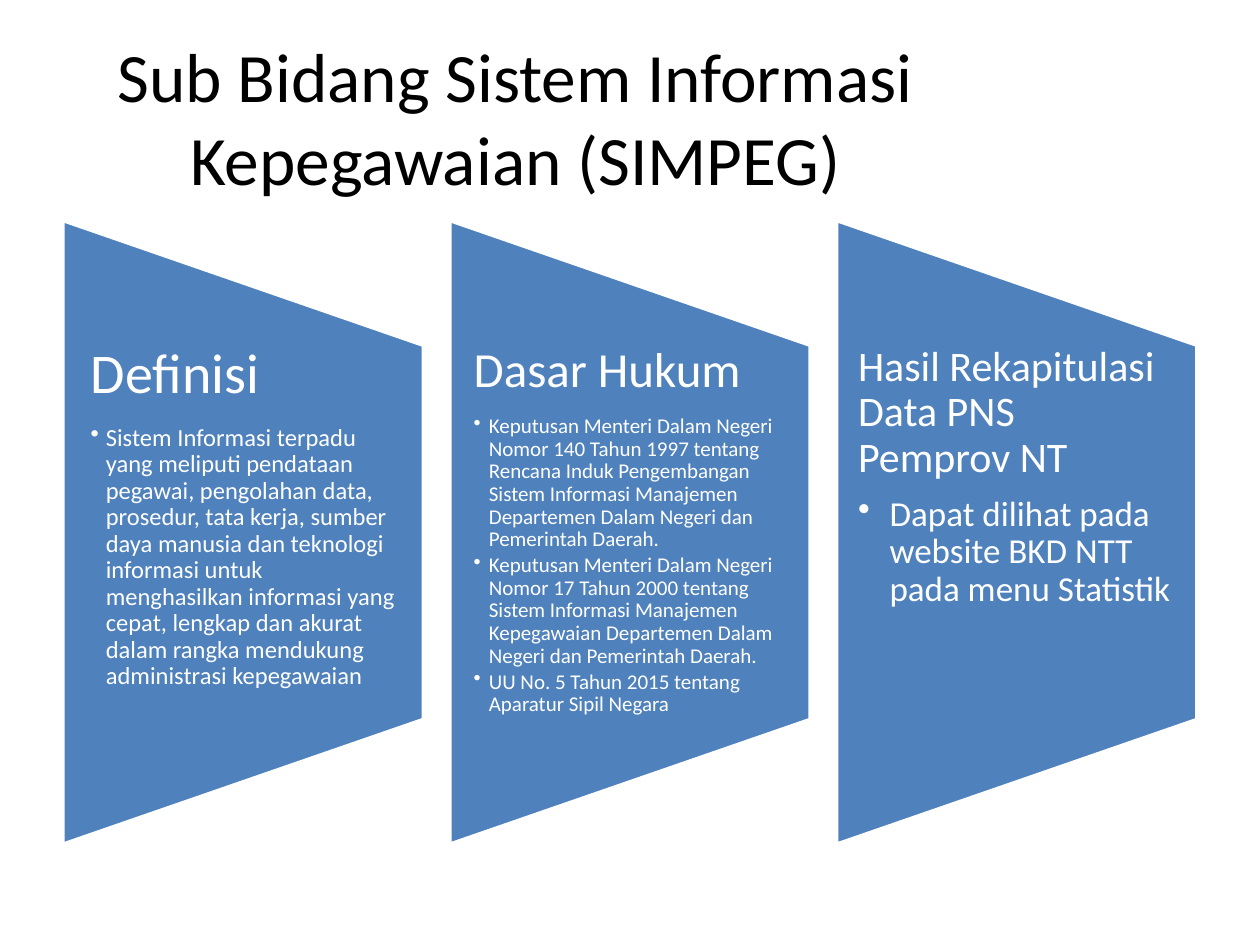
import pptx
import pptx.util
import pptx.dml.color
import pptx.enum.shapes
import pptx.enum.text
import lxml.etree
from pptx.oxml.ns import qn

COLORS = {"panel": "4F81BD", "light": "FFFFFF", "title": "000000"}
FONT = "Calibri"
SLIDE_WIDTH, SLIDE_HEIGHT = 10, 7.5
PANEL_LEFT, PANEL_PITCH, PANEL_WIDTH = 0.5, 3.07, 2.86
PANEL_TOP, PANEL_HEIGHT = 1.75, 4.95
TEXT_HEIGHT = PANEL_HEIGHT * 0.6

# heading, heading size, body size, side inset, bullet indent, bullets
PANELS = [
    ("Definisi", 32, 14, 0.22, 0.12, [
        "Sistem Informasi terpadu yang meliputi pendataan pegawai, pengolahan data, "
        "prosedur, tata kerja, sumber daya manusia dan teknologi informasi untuk "
        "menghasilkan informasi yang cepat, lengkap dan akurat dalam rangka "
        "mendukung administrasi kepegawaian",
    ]),
    ("Dasar Hukum", 28, 12, 0.19, 0.12, [
        "Keputusan Menteri Dalam Negeri Nomor 140 Tahun 1997 tentang Rencana Induk "
        "Pengembangan Sistem Informasi Manajemen Departemen Dalam Negeri dan "
        "Pemerintah Daerah.",
        "Keputusan Menteri Dalam Negeri Nomor 17 Tahun 2000 tentang Sistem Informasi "
        "Manajemen Kepegawaian Departemen Dalam Negeri dan Pemerintah Daerah.",
        "UU No. 5 Tahun 2015 tentang Aparatur Sipil Negara",
    ]),
    ("Hasil Rekapitulasi Data PNS Pemprov NT", 24, 20, 0.17, 0.25, [
        "Dapat dilihat pada website BKD NTT pada menu Statistik",
    ]),
]


def rgb(name):
    return pptx.dml.color.RGBColor.from_string(COLORS[name])


def inches(*lengths):
    return [pptx.util.Inches(length) for length in lengths]


def write_paragraph(paragraph, text, size, color):
    paragraph.text = text
    for run in paragraph.runs:
        run.font.name = FONT
        run.font.size = pptx.util.Pt(size)
        run.font.color.rgb = rgb(color)


def add_bullet(paragraph, indent):
    properties = paragraph._p.get_or_add_pPr()
    properties.set("marL", str(pptx.util.Inches(indent)))
    properties.set("indent", str(-pptx.util.Inches(indent)))
    lxml.etree.SubElement(properties, qn("a:buChar")).set("char", "•")


def space_paragraph(paragraph, after):
    paragraph.line_spacing = 0.9
    paragraph.space_after = pptx.util.Pt(after)


def add_title(slide, text):
    box = slide.shapes.add_textbox(*inches(0.5, 0.3, 7.18, 1.25))
    frame = box.text_frame
    frame.word_wrap = True
    frame.vertical_anchor = pptx.enum.text.MSO_ANCHOR.MIDDLE
    write_paragraph(frame.paragraphs[0], text, 39.6, "title")
    frame.paragraphs[0].alignment = pptx.enum.text.PP_ALIGN.CENTER


def add_panel_shape(slide, left):
    """Turn the shape a quarter about its centre, so its width runs downwards."""
    shape = slide.shapes.add_shape(
        pptx.enum.shapes.MSO_SHAPE.FLOWCHART_MANUAL_OPERATION,
        *inches(left + (PANEL_WIDTH - PANEL_HEIGHT) / 2,
                PANEL_TOP + (PANEL_HEIGHT - PANEL_WIDTH) / 2,
                PANEL_HEIGHT, PANEL_WIDTH))
    shape.rotation = 270
    shape.shadow.inherit = False
    shape.fill.solid()
    shape.fill.fore_color.rgb = rgb("panel")
    shape.line.color.rgb = rgb("light")
    shape.line.width = pptx.util.Pt(2)


def add_panel_text(slide, left, heading, heading_size, body_size, inset, indent, bullets):
    top = PANEL_TOP + (PANEL_HEIGHT - TEXT_HEIGHT) / 2
    box = slide.shapes.add_textbox(*inches(left, top, PANEL_WIDTH, TEXT_HEIGHT))
    frame = box.text_frame
    frame.word_wrap = True
    frame.margin_left = frame.margin_right = pptx.util.Inches(inset)
    frame.margin_top = frame.margin_bottom = 0
    write_paragraph(frame.paragraphs[0], heading, heading_size, "light")
    space_paragraph(frame.paragraphs[0], heading_size * 0.35)
    for bullet in bullets:
        paragraph = frame.add_paragraph()
        paragraph.level = 1
        add_bullet(paragraph, indent)
        write_paragraph(paragraph, bullet, body_size, "light")
        space_paragraph(paragraph, body_size * 0.15)


def main():
    presentation = pptx.Presentation()
    presentation.slide_width, presentation.slide_height = inches(SLIDE_WIDTH, SLIDE_HEIGHT)
    slide = presentation.slides.add_slide(presentation.slide_layouts[6])
    add_title(slide, "Sub Bidang Sistem Informasi Kepegawaian (SIMPEG)")
    for column, panel in enumerate(PANELS):
        left = PANEL_LEFT + column * PANEL_PITCH
        add_panel_shape(slide, left)
        add_panel_text(slide, left, *panel)
    presentation.save("out.pptx")


if __name__ == "__main__":
    main()
